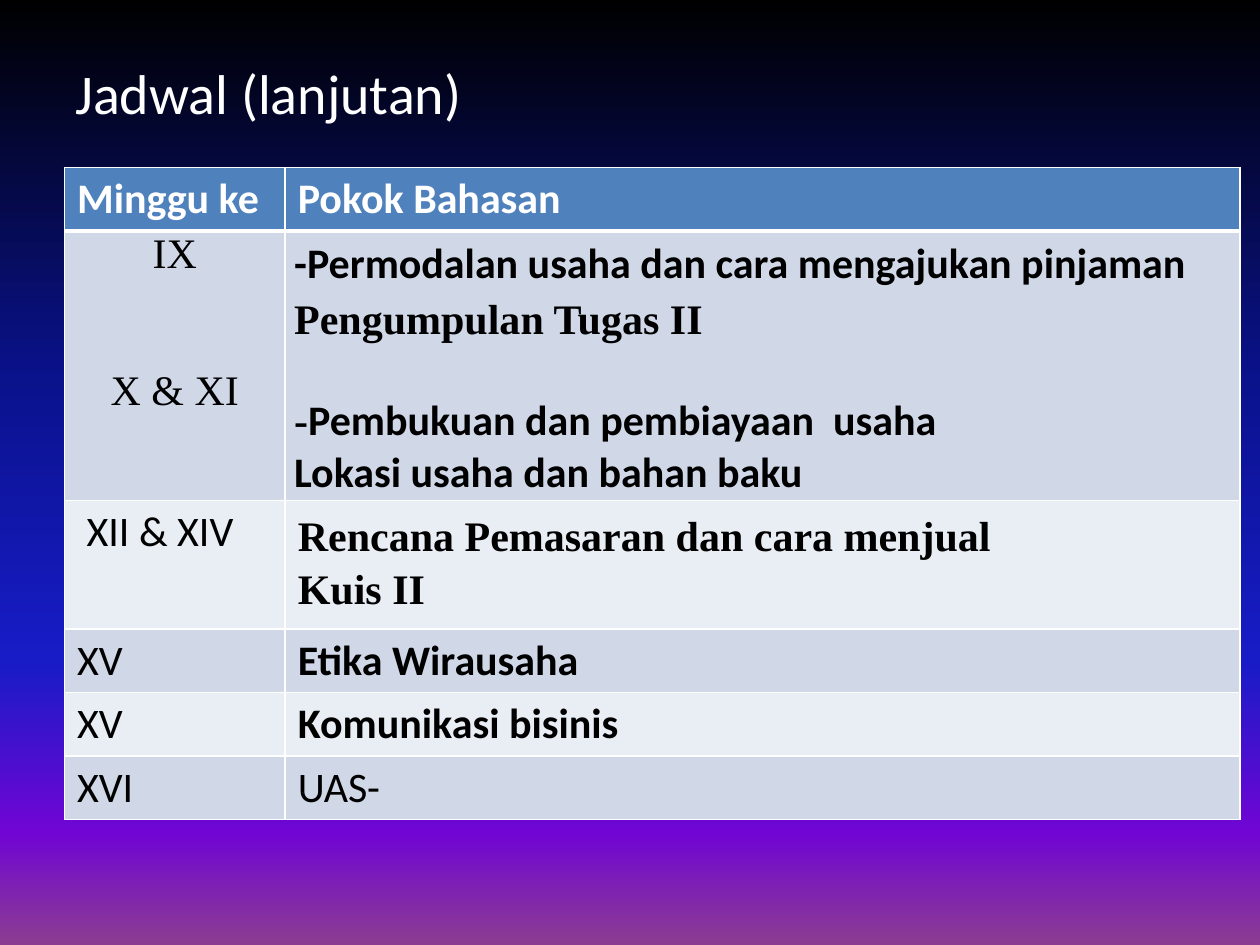
"""Build the lecture schedule slide with its weekly topic table."""
from dataclasses import dataclass

from lxml.etree import SubElement
from pptx import Presentation
from pptx.dml.color import RGBColor
from pptx.enum.text import MSO_ANCHOR, PP_ALIGN
from pptx.oxml.ns import qn
from pptx.slide import Slide
from pptx.table import _Cell
from pptx.text.text import TextFrame
from pptx.util import Cm, Pt

SANS, SERIF = "Calibri", "Times New Roman"
WHITE, BLACK, HEADER = "FFFFFF", "000000", "4F81BD"
BANDS = ("D0D8E8", "E9EDF4")
BACKGROUND = ((0, "000000"), (40, "0A128C"), (70, "181CC7"), (88, "7005D4"), (100, "8C3D91"))


@dataclass(frozen=True)
class Line:
    text: str
    font: str = SANS
    bold: bool = False
    centred: bool = False
    spacing: float | None = None
    before: float = 0
    serif_prefix: str = ""


@dataclass(frozen=True)
class Row:
    height: float
    week: tuple[Line, ...]
    topic: tuple[Line, ...]
    tight: bool = False


ROWS = (
    Row(1.28, (Line("Minggu ke", bold=True),), (Line("Pokok Bahasan", bold=True),)),
    Row(
        5.4,
        (Line("IX", SERIF, centred=True), Line(" X & XI ", SERIF, centred=True, before=52)),
        (
            Line("-Permodalan usaha dan cara mengajukan pinjaman", bold=True, spacing=1.15),
            Line("Pengumpulan Tugas II", SERIF, True, spacing=1.15),
            Line("Pembukuan dan pembiayaan  usaha", bold=True, before=30, serif_prefix="-"),
            Line("Lokasi usaha dan bahan baku", bold=True),
        ),
        tight=True,
    ),
    Row(
        2.41,
        (Line(" XII & XIV"),),
        (
            Line("Rencana Pemasaran dan cara menjual", SERIF, True, spacing=1.15),
            Line("Kuis II", SERIF, True, spacing=1.15),
        ),
    ),
    Row(1.28, (Line("XV"),), (Line("Etika Wirausaha", bold=True),)),
    Row(1.28, (Line("XV"),), (Line("Komunikasi bisinis", bold=True),)),
    Row(1.28, (Line("XVI"),), (Line("UAS-"),)),
)


def colour(value: str) -> RGBColor:
    """Turn a hex string into a colour."""
    return RGBColor.from_string(value)


def write_lines(text_frame: TextFrame, lines: tuple[Line, ...], size: float, text_colour: str) -> None:
    """Write formatted lines, one to a paragraph."""
    text_frame.text = "\n".join(line.text for line in lines)
    for paragraph, line in zip(text_frame.paragraphs, lines):
        if line.serif_prefix:
            paragraph.text = line.serif_prefix
            paragraph.add_run().text = line.text
        paragraph.alignment = PP_ALIGN.CENTER if line.centred else PP_ALIGN.LEFT
        if line.spacing:
            paragraph.line_spacing = line.spacing
        if line.before:
            paragraph.space_before = Pt(line.before)
        for run in paragraph.runs:
            run.font.name = line.font
            run.font.size = Pt(size)
            run.font.bold = line.bold
            run.font.color.rgb = colour(text_colour)
        if line.serif_prefix:
            paragraph.runs[0].font.name = SERIF


def set_borders(cell: _Cell, top: float, bottom: float) -> None:
    """Give a cell white borders of the given weights."""
    properties = cell._tc.get_or_add_tcPr()
    for side, width in (("L", 1), ("R", 1), ("T", top), ("B", bottom)):
        border = SubElement(properties, qn(f"a:ln{side}"), w=str(Pt(width)))
        fill = SubElement(border, qn("a:solidFill"))
        SubElement(fill, qn("a:srgbClr"), val=WHITE)


def set_background(slide: Slide) -> None:
    """Fill the background with a vertical gradient."""
    fill = slide.background.fill
    fill.gradient()
    fill.gradient_angle = 270
    stops = next(slide._element.iter(qn("a:gsLst")))
    for stop in list(stops):
        stops.remove(stop)
    for position, value in BACKGROUND:
        stop = SubElement(stops, qn("a:gs"), pos=str(position * 1000))
        SubElement(stop, qn("a:srgbClr"), val=value)


def add_title(slide: Slide) -> None:
    """Add the slide title."""
    title = slide.shapes.add_textbox(Cm(1.27), Cm(0.76), Cm(22.86), Cm(2.21))
    title.text_frame.word_wrap = True
    title.text_frame.vertical_anchor = MSO_ANCHOR.MIDDLE
    write_lines(title.text_frame, (Line("Jadwal (lanjutan)"),), 32, WHITE)


def add_schedule(slide: Slide) -> None:
    """Add the table of weeks and topics."""
    height = sum(row.height for row in ROWS)
    table = slide.shapes.add_table(len(ROWS), 2, Cm(1.3), Cm(3.38), Cm(23.7), Cm(height)).table
    for column, width in zip(table.columns, (4.45, 19.25)):
        column.width = Cm(width)
    for index, row in enumerate(ROWS):
        table.rows[index].height = Cm(row.height)
        for cell, lines in zip(table.rows[index].cells, (row.week, row.topic)):
            set_borders(cell, 3 if index == 1 else 1, 3 if index == 0 else 1)
            cell.fill.solid()
            cell.fill.fore_color.rgb = colour(BANDS[(index - 1) % 2] if index else HEADER)
            if row.tight:
                cell.margin_left = cell.margin_right = Cm(0.18)
                cell.margin_top = cell.margin_bottom = Cm(0)
            write_lines(cell.text_frame, lines, 24, BLACK if index else WHITE)


def main() -> None:
    """Create and save the presentation."""
    presentation = Presentation()
    presentation.slide_width, presentation.slide_height = Cm(25.4), Cm(19.05)
    slide = presentation.slides.add_slide(presentation.slide_layouts[6])
    set_background(slide)
    add_title(slide)
    add_schedule(slide)
    presentation.save("out.pptx")


if __name__ == "__main__":
    main()
